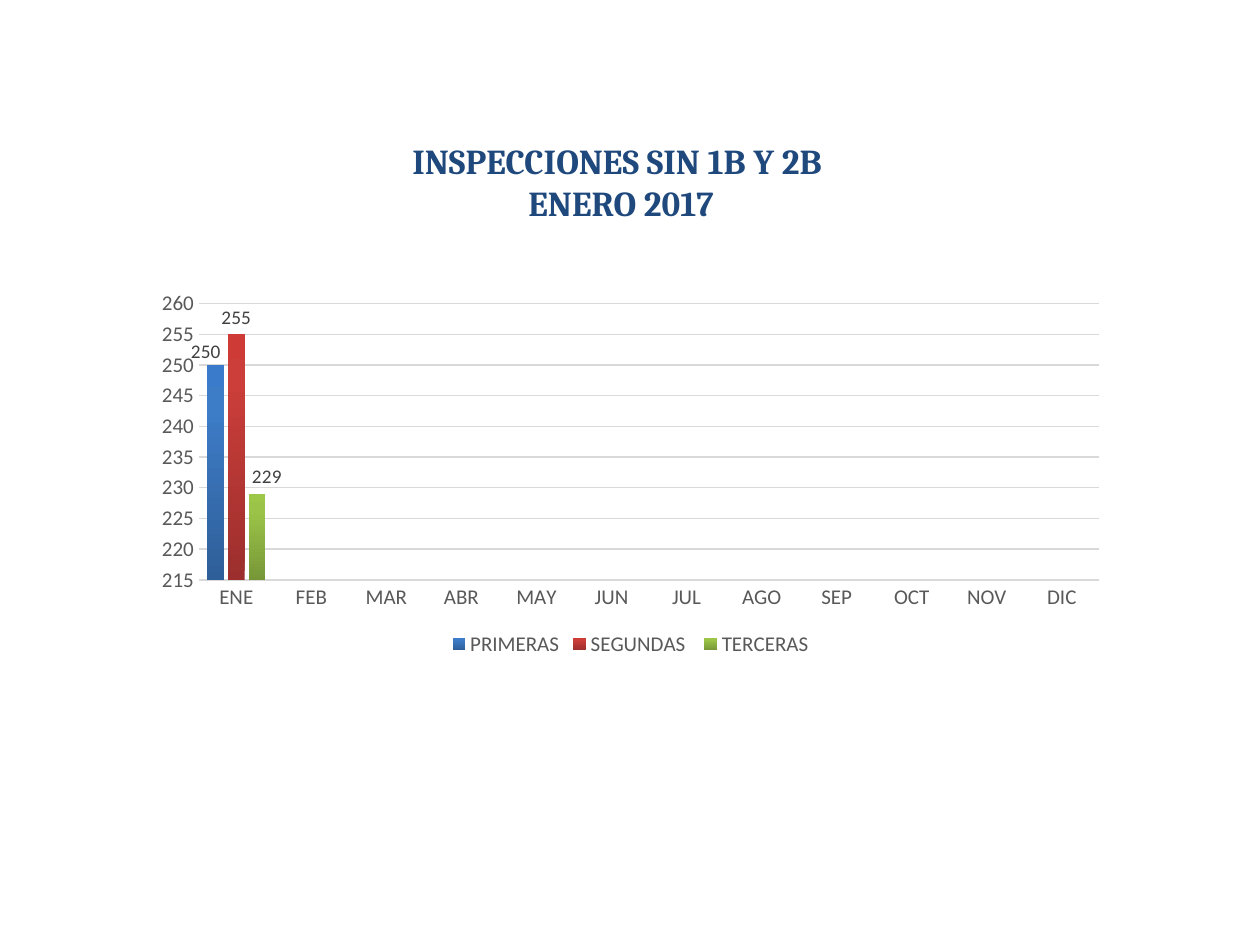
"""Builds the January 2017 inspections slide with its clustered column chart."""
from copy import deepcopy

from lxml import etree
from pptx import Presentation
from pptx import util as u
from pptx.chart.data import CategoryChartData
from pptx.dml.color import RGBColor
from pptx.enum import chart as kinds, text
from pptx.oxml import ns


def paint(target, color):
    target.rgb = RGBColor.from_string(color)


def style(font, size, color, name="Calibri"):
    font.size, font.name = u.Pt(size), name
    paint(font.color, color)


deck = Presentation()
deck.slide_width, deck.slide_height = u.Inches(10), u.Inches(7.5)
width, height = deck.slide_width, deck.slide_height
page = deck.slides.add_slide(deck.slide_layouts[5])

title = page.shapes.title
title.left, title.top = int(width * 0.114), int(height * 0.1413)
title.width, title.height = int(width * 0.758), int(height * 0.148)
frame = title.text_frame
frame.word_wrap = True
frame.auto_size = text.MSO_AUTO_SIZE.NONE
frame.vertical_anchor = text.MSO_ANCHOR.TOP
for index, line in enumerate(["INSPECCIONES SIN 1B Y 2B ", "ENERO 2017"]):
    para = frame.add_paragraph() if index else frame.paragraphs[0]
    para.alignment = text.PP_ALIGN.CENTER
    span = para.add_run()
    span.text = line
    span.font.bold = True
    style(span.font, 20, "1F497D", "Cambria")

months = "ENE FEB MAR ABR MAY JUN JUL AGO SEP OCT NOV DIC".split()
inspections = [
    ("PRIMERAS", 250, ["2F5F99", "3D7CC7", "3A7CCB"], (-0.01, 0.01)),
    ("SEGUNDAS ", 255, ["9C2F2D", "CB3E3A", "CE3B37"], None),
    ("TERCERAS", 229, ["779737", "9BC348", "9DC746"], (0.01, 0)),
]
data = CategoryChartData()
data.categories = months
for name, january, colors, shift in inspections:
    data.add_series(name, [january] + [None] * (len(months) - 1))

chart = page.shapes.add_chart(
    kinds.XL_CHART_TYPE.COLUMN_CLUSTERED, int(width * 0.113), int(height * 0.3),
    int(width * 0.775), int(height * 0.4), data).chart
style(chart.font, 10, "000000")
chart.has_title = False
chart.has_legend = True
chart.legend.position = kinds.XL_LEGEND_POSITION.BOTTOM
chart.legend.include_in_layout = False
style(chart.legend.font, 12, "595959")

for axis in (chart.category_axis, chart.value_axis):
    axis.major_tick_mark = axis.minor_tick_mark = kinds.XL_TICK_MARK.NONE
    style(axis.tick_labels.font, 12, "595959")
baseline = chart.category_axis.format.line
baseline.width = u.Pt(1)
paint(baseline.color, "D9D9D9")
scale = chart.value_axis
scale.minimum_scale, scale.maximum_scale, scale.major_unit = 215, 260, 5
scale.format.line.fill.background()
grid = scale.major_gridlines.format.line
grid.width = u.Pt(0.75)
paint(grid.color, "D9D9D9")

plot = chart.plots[0]
plot.vary_by_categories = False
plot.gap_width, plot.overlap = 100, -24
for series, (name, january, colors, shift) in zip(plot.series, inspections):
    series.invert_if_negative = False
    fill = series.format.fill
    fill.gradient()
    fill.gradient_angle = 90
    stops = series._element.find(".//" + ns.qn("a:gsLst"))
    stops.append(deepcopy(stops[0]))
    for stop, position, color in zip(fill.gradient_stops, (0, 0.8, 1), colors):
        stop.position = position
        paint(stop.color, color)

    labels = series.data_labels
    labels.show_value = True
    labels.position = kinds.XL_LABEL_POSITION.OUTSIDE_END
    style(labels.font, 11, "404040")
    if shift:
        label = series.points[0].data_label
        label.position = kinds.XL_LABEL_POSITION.OUTSIDE_END
        style(label.font, 11, "404040")
        layout = etree.Element(ns.qn("c:layout"))
        manual = etree.SubElement(layout, ns.qn("c:manualLayout"))
        for side, offset in zip("xy", shift):
            etree.SubElement(manual, ns.qn("c:" + side), val=str(offset))
        series._element.find(".//" + ns.qn("c:dLbl")).insert(1, layout)

deck.save("out.pptx")
